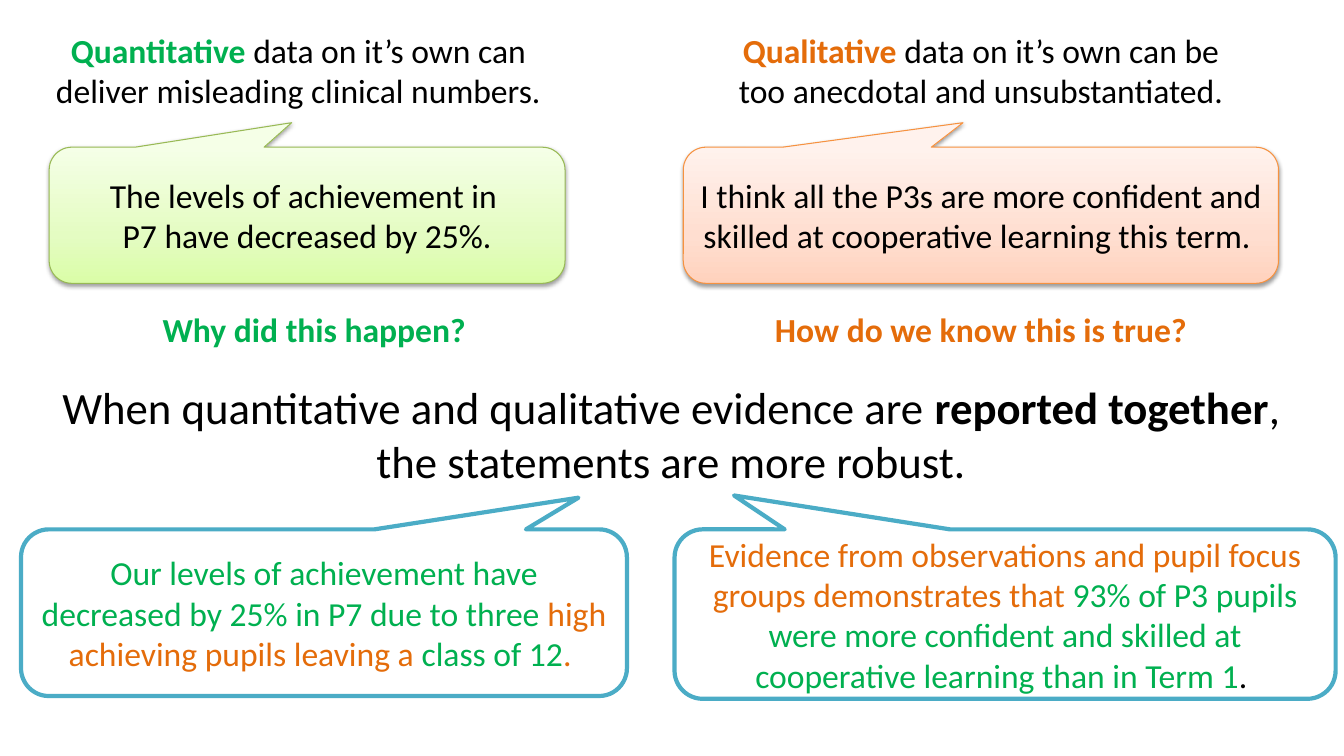
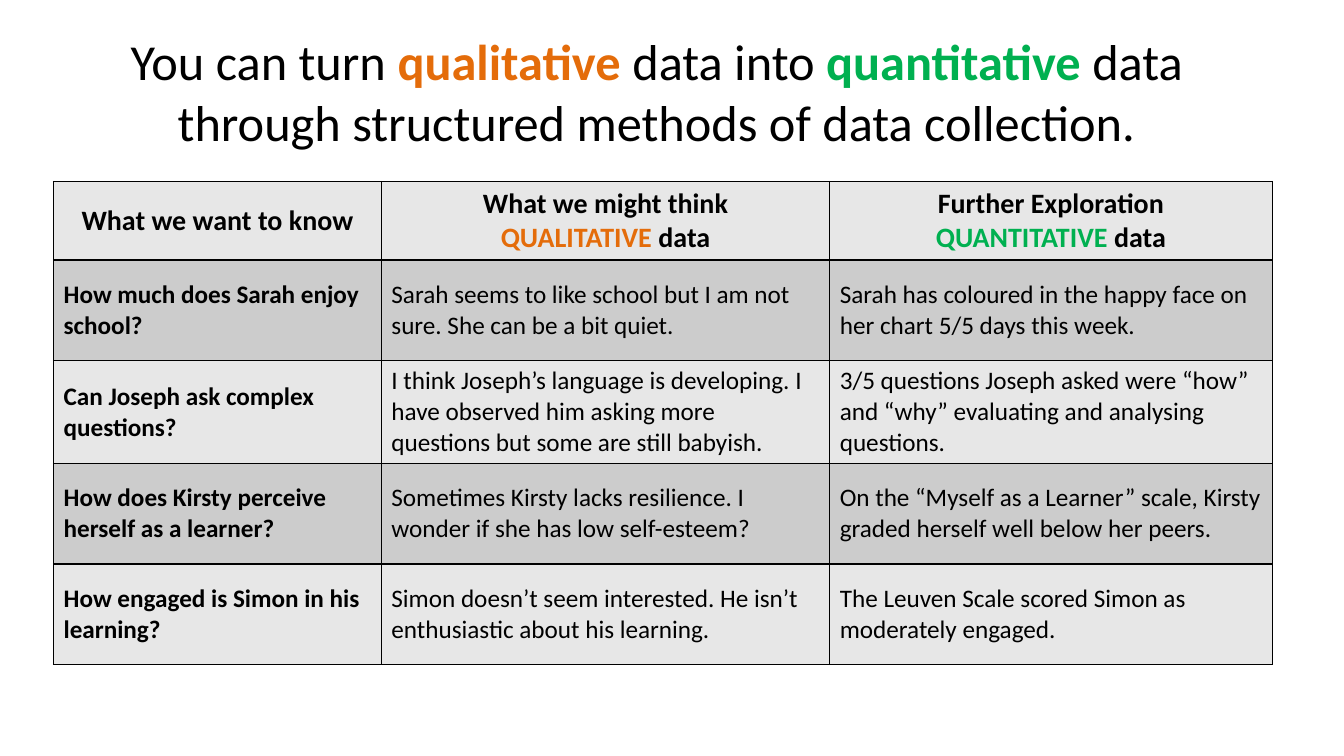
from copy import deepcopy

from lxml import etree
from pptx import Presentation
from pptx.dml.color import RGBColor
from pptx.enum.shapes import MSO_SHAPE
from pptx.enum.text import MSO_ANCHOR, MSO_AUTO_SIZE, PP_ALIGN
from pptx.oxml.ns import qn
from pptx.util import Cm, Pt

CALLOUT = MSO_SHAPE.ROUNDED_RECTANGULAR_CALLOUT
TOP, MIDDLE = MSO_ANCHOR.TOP, MSO_ANCHOR.MIDDLE
LEFT, CENTER = PP_ALIGN.LEFT, PP_ALIGN.CENTER
NO_AUTOFIT = MSO_AUTO_SIZE.NONE
TITLE_ONLY = 5

FONT = "Calibri"
COLORS = {
    "text": "000000",
    "quantitative": "00B050",
    "qualitative": "E46C0A",
    "quantitative_line": "98B955",
    "qualitative_line": "F69240",
    "combined_line": "4BACC6",
    "row_light": "E7E7E7",
    "row_dark": "CCCCCC",
    "border": "000000",
}
GRADIENTS = {
    "quantitative": ("DAFDA7", "E4FCC2", "F5FFE7"),
    "qualitative": ("FFD2BD", "FFDED0", "FFF2ED"),
}
GRADIENT_POSITIONS = (0, 0.35, 1)

TEXT_WIDTH = 13
CLAIM_HEIGHT, QUESTION_HEIGHT = 2.31, 1.27
CALLOUT_OFFSET, CALLOUT_HEIGHT, QUESTION_OFFSET = 3.09, 3.43, 7.03

# A paragraph is a list of runs: (text, colour name, bold).
HEADERS = [
    [[("What we want to know", "text", True)]],
    [[("What we might think", "text", True)],
     [("QUALITATIVE", "qualitative", True), (" data", "text", True)]],
    [[("Further Exploration", "text", True)],
     [("QUANTITATIVE", "quantitative", True), (" data", "text", True)]],
]
ROWS = [
    ("How much does Sarah enjoy school?",
     "Sarah seems to like school but I am not sure. She can be a bit quiet.",
     "Sarah has coloured in the happy face on her chart 5/5 days this week."),
    ("Can Joseph ask complex questions?",
     "I think Joseph’s language is developing. I have observed him asking more "
     "questions but some are still babyish.",
     "3/5 questions Joseph asked were “how” and “why” evaluating and analysing questions."),
    ("How does Kirsty perceive herself as a learner?",
     "Sometimes Kirsty lacks resilience. I wonder if she has low self-esteem?",
     "On the “Myself as a Learner” scale, Kirsty graded herself well below her peers."),
    ("How engaged is Simon in his learning?",
     "Simon doesn’t seem interested. He isn’t enthusiastic about his learning.",
     "The Leuven Scale scored Simon as moderately engaged."),
]


def rgb(name):
    return RGBColor.from_string(COLORS[name])


def write(frame, paragraphs, size, align=CENTER):
    for index, runs in enumerate(paragraphs):
        para = frame.add_paragraph() if index else frame.paragraphs[0]
        para.alignment = align
        for text, color, bold in runs:
            span = para.add_run()
            span.text = text
            span.font.name = FONT
            span.font.size = Pt(size)
            span.font.bold = bold
            span.font.color.rgb = rgb(color)


def add_text(slide, box, runs, size=24):
    frame = slide.shapes.add_textbox(*map(Cm, box)).text_frame
    frame.word_wrap = True
    write(frame, [runs], size)


def set_title(slide, box, runs, size):
    title = slide.shapes.title
    title.left, title.top, title.width, title.height = map(Cm, box)
    frame = title.text_frame
    frame.word_wrap = True
    frame.auto_size = NO_AUTOFIT
    frame.vertical_anchor = TOP
    write(frame, [runs], size)


def add_callout(slide, box, pointer, paragraphs, line, line_width):
    shape = slide.shapes.add_shape(CALLOUT, *map(Cm, box))
    shape.adjustments[0], shape.adjustments[1] = pointer
    shape.shadow.inherit = False
    shape.fill.background()
    shape.line.color.rgb = rgb(line)
    shape.line.width = Pt(line_width)
    shape.text_frame.word_wrap = True
    shape.text_frame.vertical_anchor = MIDDLE
    write(shape.text_frame, paragraphs, 24)
    return shape


def shade(shape, colors):
    """Give a shape a three-stop vertical gradient and a soft shadow below."""
    shape.fill.gradient()
    shape.fill.gradient_angle = 90
    properties = shape.element.spPr
    stops = properties.find(".//" + qn("a:gsLst"))
    stops.append(deepcopy(stops[0]))
    for stop, color, position in zip(shape.fill.gradient_stops, colors, GRADIENT_POSITIONS):
        stop.color.rgb = RGBColor.from_string(color)
        stop.position = position
    shadow = etree.SubElement(properties.find(qn("a:effectLst")), qn("a:outerShdw"),
                              blurRad="40000", dist="20000", dir="5400000", rotWithShape="0")
    black = etree.SubElement(shadow, qn("a:srgbClr"), val="000000")
    etree.SubElement(black, qn("a:alpha"), val="38000")


def evidence_column(slide, box, kind, claim, quote, question, shifts=(0, 0)):
    """Stack a claim, a quoted example and a question; shifts move claim and question."""
    left, top, width = box
    claim_left, question_left = (left + (width - TEXT_WIDTH) / 2 + shift for shift in shifts)
    add_text(slide, (claim_left, top, TEXT_WIDTH, CLAIM_HEIGHT),
             [(kind.capitalize(), kind, True), (claim, "text", False)])
    callout = add_callout(slide, (left, top + CALLOUT_OFFSET, width, CALLOUT_HEIGHT),
                          (-0.03, -0.68), [[(line, "text", False)] for line in quote],
                          kind + "_line", 0.75)
    shade(callout, GRADIENTS[kind])
    add_text(slide, (question_left, top + QUESTION_OFFSET, TEXT_WIDTH, QUESTION_HEIGHT),
             [(question, kind, True)])


def fill_cell(cell, paragraphs, size, align, fill):
    properties = cell._tc.get_or_add_tcPr()
    for side in ("a:lnL", "a:lnR", "a:lnT", "a:lnB"):
        line = etree.SubElement(properties, qn(side), w=str(Pt(1)))
        solid = etree.SubElement(line, qn("a:solidFill"))
        etree.SubElement(solid, qn("a:srgbClr"), val=COLORS["border"])
    cell.fill.solid()
    cell.fill.fore_color.rgb = rgb(fill)
    cell.vertical_anchor = MIDDLE
    write(cell.text_frame, paragraphs, size, align)


def question_table(slide, box, column_widths, row_heights):
    frame = slide.shapes.add_table(len(row_heights), len(column_widths), *map(Cm, box))
    table = frame.table
    for column, width in zip(table.columns, column_widths):
        column.width = Cm(width)
    for row, height in zip(table.rows, row_heights):
        row.height = Cm(height)
    for column, paragraphs in enumerate(HEADERS):
        fill_cell(table.cell(0, column), paragraphs, 20, CENTER, "row_light")
    for row, texts in enumerate(ROWS, start=1):
        fill = "row_dark" if row % 2 else "row_light"
        for column, text in enumerate(texts):
            fill_cell(table.cell(row, column), [[(text, "text", column == 0)]], 18, LEFT, fill)


def evidence_slide(deck):
    slide = deck.slides.add_slide(deck.slide_layouts[TITLE_ONLY])
    evidence_column(slide, (1.24, 0.62, 13), "quantitative",
                    " data on it’s own can deliver misleading clinical numbers.",
                    ["The levels of achievement in ", "P7 have decreased by 25%."],
                    "Why did this happen?", shifts=(-0.22, 0.18))
    evidence_column(slide, (17.22, 0.62, 15), "qualitative",
                    " data on it’s own can be too anecdotal and unsubstantiated.",
                    ["I think all the P3s are more confident and skilled at "
                     "cooperative learning this term. "],
                    "How do we know this is true?")
    set_title(slide, (0.81, 9.45, 32.21, 3), [
        ("When quantitative and qualitative evidence are ", "text", False),
        ("reported together", "text", True),
        (", the statements are more robust.", "text", False)], 32)
    add_callout(slide, (0.53, 13.34, 15.27, 4.2), (0.42, -0.69), [[
        ("Our levels of achievement have decreased by 25% in P7 due to three ",
         "quantitative", False),
        ("high achieving pupils leaving a ", "qualitative", False),
        ("class of 12", "quantitative", False),
        (". ", "qualitative", False)]], "combined_line", 3)
    add_callout(slide, (17, 13.34, 16.66, 4.27), (-0.41, -0.7), [[
        ("Evidence from observations and pupil focus groups demonstrates that ",
         "qualitative", False),
        ("93% of P3 pupils were more confident and skilled at cooperative learning "
         "than in Term 1", "quantitative", False),
        (". ", "text", False)]], "combined_line", 3)


def methods_slide(deck):
    slide = deck.slides.add_slide(deck.slide_layouts[TITLE_ONLY])
    set_title(slide, (1.02, 0.64, 31.06, 3.33), [
        ("You can turn ", "text", False),
        ("qualitative ", "qualitative", True),
        ("data into ", "text", False),
        ("quantitative", "quantitative", True),
        (" data through structured methods of data collection.", "text", False)], 36)
    question_table(slide, (1.35, 4.57, 30.71, 12.12), (8.26, 11.3, 11.15),
                   [1.96] + [2.54] * len(ROWS))


def main():
    deck = Presentation()
    deck.slide_width, deck.slide_height = Cm(33.87), Cm(19.05)
    evidence_slide(deck)
    methods_slide(deck)
    deck.save("out.pptx")


if __name__ == "__main__":
    main()
